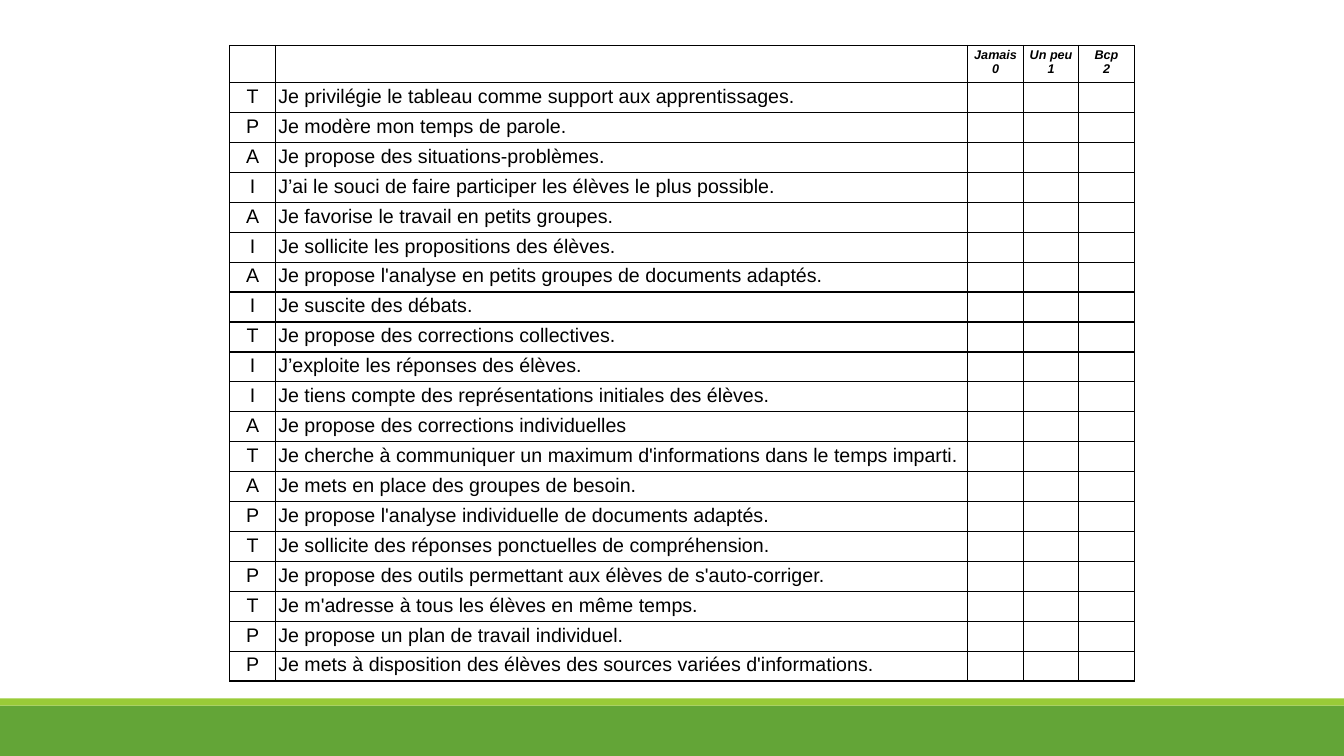
from dataclasses import dataclass

from lxml.etree import SubElement
from pptx import Presentation
from pptx.dml.color import RGBColor
from pptx.enum.shapes import MSO_SHAPE
from pptx.enum.text import PP_ALIGN
from pptx.oxml.ns import qn
from pptx.util import Inches, Pt


@dataclass(frozen=True)
class Theme:
    font: str = "Arial"
    ink: str = "000000"
    band: str = "63A537"
    band_edge: str = "99CB38"
    header_size: int = 9
    body_size: int = 14
    border: int = 1
    inset: float = 0.03


SCALE = [("Jamais", "0"), ("Un peu", "1"), ("Bcp", "2")]

STATEMENTS = [
    ("T", "Je privilégie le tableau comme support aux apprentissages."),
    ("P", "Je modère mon temps de parole."),
    ("A", "Je propose des situations-problèmes."),
    ("I", "J’ai le souci de faire participer les élèves le plus possible."),
    ("A", "Je favorise le travail en petits groupes."),
    ("I", "Je sollicite les propositions des élèves."),
    ("A", "Je propose l'analyse en petits groupes de documents adaptés."),
    ("I", "Je suscite des débats."),
    ("T", "Je propose des corrections collectives."),
    ("I", "J’exploite les réponses des élèves."),
    ("I", "Je tiens compte des représentations initiales des élèves."),
    ("A", "Je propose des corrections individuelles"),
    ("T", "Je cherche à communiquer un maximum d'informations dans le temps imparti."),
    ("A", "Je mets en place des groupes de besoin."),
    ("P", "Je propose l'analyse individuelle de documents adaptés."),
    ("T", "Je sollicite des réponses ponctuelles de compréhension."),
    ("P", "Je propose des outils permettant aux élèves de s'auto-corriger."),
    ("T", "Je m'adresse à tous les élèves en même temps."),
    ("P", "Je propose un plan de travail individuel."),
    ("P", "Je mets à disposition des élèves des sources variées d'informations."),
]


class SlideBuilder:
    def __init__(self, slide, theme):
        self.slide = slide
        self.theme = theme

    def band(self, top, height, color):
        band = self.slide.shapes.add_shape(
            MSO_SHAPE.RECTANGLE, 0, Inches(top), Inches(13.33), Inches(height))
        band.shadow.inherit = False
        band.fill.solid()
        band.fill.fore_color.rgb = RGBColor.from_string(color)
        band.line.fill.background()

    def grid(self, left, top, widths, heights):
        grid = self.slide.shapes.add_table(
            len(heights), len(widths), Inches(left), Inches(top),
            Inches(sum(widths)), Inches(sum(heights))).table
        grid.first_row = grid.horz_banding = False
        for column, width in zip(grid.columns, widths):
            column.width = Inches(width)
        for row, height in zip(grid.rows, heights):
            row.height = Inches(height)
        return grid

    def cell(self, cell, lines=(), size=None, centered=False, strong=False):
        size = size or self.theme.body_size
        cell.margin_left = cell.margin_right = Inches(self.theme.inset)
        cell.margin_top = cell.margin_bottom = Inches(self.theme.inset)
        self.borders(cell)
        cell.fill.background()

        paragraph = cell.text_frame.paragraphs[0]
        paragraph.alignment = PP_ALIGN.CENTER if centered else PP_ALIGN.LEFT
        for number, line in enumerate(lines):
            if number:
                paragraph.add_line_break()
            run = paragraph.add_run()
            run.text = line
            font = run.font
            font.name, font.size = self.theme.font, Pt(size)
            font.bold = font.italic = strong
            font.color.rgb = RGBColor.from_string(self.theme.ink)

        # Line breaks and empty cells need a size too, or rows grow
        for line_break in paragraph._p.findall(qn("a:br")):
            SubElement(line_break, qn("a:rPr"), sz=str(size * 100))
        if not lines:
            SubElement(paragraph._p, qn("a:endParaRPr"), sz=str(size * 100))

    def borders(self, cell):
        properties = cell._tc.get_or_add_tcPr()
        for side in ("a:lnL", "a:lnR", "a:lnT", "a:lnB"):
            edge = SubElement(properties, qn(side), w=str(Pt(self.theme.border)))
            fill = SubElement(edge, qn("a:solidFill"))
            SubElement(fill, qn("a:srgbClr"), val=self.theme.ink)


def main():
    theme = Theme()
    presentation = Presentation()
    presentation.slide_width = Inches(13.33)
    presentation.slide_height = Inches(7.5)
    builder = SlideBuilder(
        presentation.slides.add_slide(presentation.slide_layouts[6]), theme)

    # Bottom bands
    builder.band(7, 0.5, theme.band)
    builder.band(6.93, 0.07, theme.band_edge)

    # Questionnaire
    header_height, total_height = 0.37, 6.23
    row_height = (total_height - header_height) / len(STATEMENTS)
    questionnaire = builder.grid(
        2.28, 0.45, [0.45, 6.87] + [0.55] * len(SCALE),
        [header_height] + [row_height] * len(STATEMENTS))

    # Header row
    builder.cell(questionnaire.cell(0, 0))
    builder.cell(questionnaire.cell(0, 1))
    for column, answer in enumerate(SCALE, start=2):
        builder.cell(questionnaire.cell(0, column), answer,
                     theme.header_size, centered=True, strong=True)

    # Statements with blank answer cells
    for row, (category, statement) in enumerate(STATEMENTS, start=1):
        builder.cell(questionnaire.cell(row, 0), [category], centered=True)
        builder.cell(questionnaire.cell(row, 1), [statement])
        for column in range(2, 2 + len(SCALE)):
            builder.cell(questionnaire.cell(row, column))

    presentation.save("out.pptx")


if __name__ == "__main__":
    main()
